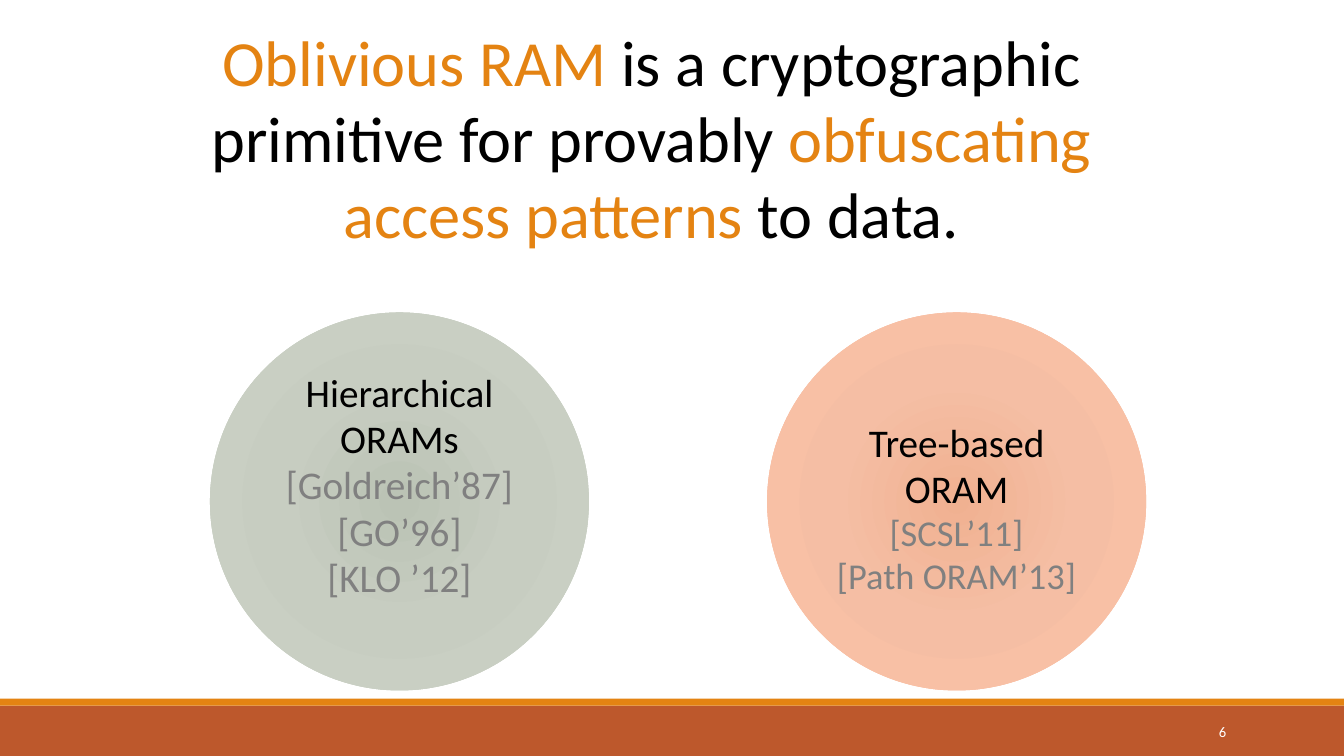
from pptx import Presentation
from pptx.util import Pt
from pptx.dml.color import RGBColor
from pptx.enum.shapes import MSO_SHAPE as SHAPE
from pptx.enum.text import PP_ALIGN as ALIGN, MSO_ANCHOR as ANCHOR
from pptx.oxml import parse_xml
from pptx.oxml.ns import nsdecls

COLORS = {"accent": "E48312", "footer": "BD582C", "text": "000000",
          "cite": "808080", "white": "FFFFFF"}
FONT = "Calibri"
TITLE = [[("Oblivious RAM ", 46, "accent"),
          ("is a cryptographic primitive for provably ", 46, "text"),
          ("obfuscating access patterns", 46, "accent"),
          (" to data.", 46, "text")]]
PAGE = [[("6", 10.5, "white")]]
BARS = [(504, 36, "footer"), (499, 5, "accent")]
CIRCLES = [
    {"stops": ["BBC3B5", "C7CDC1", "CDD4C7"], "insets": (0, 22),
     "text": [[("Hierarchical ORAMs", 28, "text")],
              [("[Goldreich’87]", 28, "cite")],
              [("[GO’96]", 28, "cite")],
              [("[KLO ’12]", 28, "cite")]]},
    {"stops": ["F0B191", "F5BEA4", "FDC3A8"], "insets": (11, 0),
     "text": [[("Tree-based ORAM", 28, "text")],
              [("[SCSL’11]", 26, "cite")],
              [("[Path ORAM’13]", 26, "cite")]]},
]
STOP_POSITIONS = (0, 45, 100)
SLIDE_W, SLIDE_H = 960, 540
CIRCLE_LEFT, CIRCLE_TOP, CIRCLE_STEP = 150, 223.2, 398
CIRCLE_W, CIRCLE_H = 270.7, 270


def rgb(name):
    return RGBColor.from_string(COLORS[name])


def add_shape(s, kind, left, top, width, height):
    sp = s.shapes.add_shape(kind, Pt(left), Pt(top), Pt(width), Pt(height))
    sp.shadow.inherit = False
    sp.line.fill.background()
    return sp


def write(tf, paragraphs, align=ALIGN.CENTER, spacing=0.98):
    tf.word_wrap = True
    for i, runs in enumerate(paragraphs):
        p = tf.add_paragraph() if i else tf.paragraphs[0]
        p.alignment = align
        p.line_spacing = spacing
        for text, size, color in runs:
            r = p.add_run()
            r.text = text
            r.font.name = FONT
            r.font.size = Pt(size)
            r.font.color.rgb = rgb(color)


def radial_fill(sp, stops):
    gs = "".join(f'<a:gs pos="{pos * 1000}"><a:srgbClr val="{color}"/></a:gs>'
                 for pos, color in zip(STOP_POSITIONS, stops))
    grad = parse_xml(
        f'<a:gradFill {nsdecls("a")} rotWithShape="1"><a:gsLst>{gs}</a:gsLst>'
        '<a:path path="circle"><a:fillToRect l="50000" t="50000" r="50000" '
        'b="50000"/></a:path></a:gradFill>')
    sp.fill.background()
    old = sp.fill._xPr.find("{*}noFill")
    sp.fill._xPr.replace(old, grad)


def add_text(s, left, top, width, height):
    return s.shapes.add_textbox(Pt(left), Pt(top), Pt(width), Pt(height)).text_frame


def main():
    prs = Presentation()
    prs.slide_width, prs.slide_height = Pt(SLIDE_W), Pt(SLIDE_H)
    s = prs.slides.add_slide(prs.slide_layouts[6])

    for top, height, color in BARS:
        bar = add_shape(s, SHAPE.RECTANGLE, 0, top, SLIDE_W, height)
        bar.fill.solid()
        bar.fill.fore_color.rgb = rgb(color)

    write(add_text(s, 134, 15, 662.4, 174.2), TITLE)

    for i, circle in enumerate(CIRCLES):
        sp = add_shape(s, SHAPE.OVAL, CIRCLE_LEFT + i * CIRCLE_STEP,
                       CIRCLE_TOP, CIRCLE_W, CIRCLE_H)
        radial_fill(sp, circle["stops"])
        tf = sp.text_frame
        tf.margin_left = tf.margin_right = 0
        tf.margin_top, tf.margin_bottom = map(Pt, circle["insets"])
        tf.vertical_anchor = ANCHOR.MIDDLE
        write(tf, circle["text"])

    tf = add_text(s, 780, 508.3, 103, 28.8)
    tf.vertical_anchor = ANCHOR.MIDDLE
    write(tf, PAGE, ALIGN.RIGHT, 1.0)

    prs.save("out.pptx")


if __name__ == "__main__":
    main()
